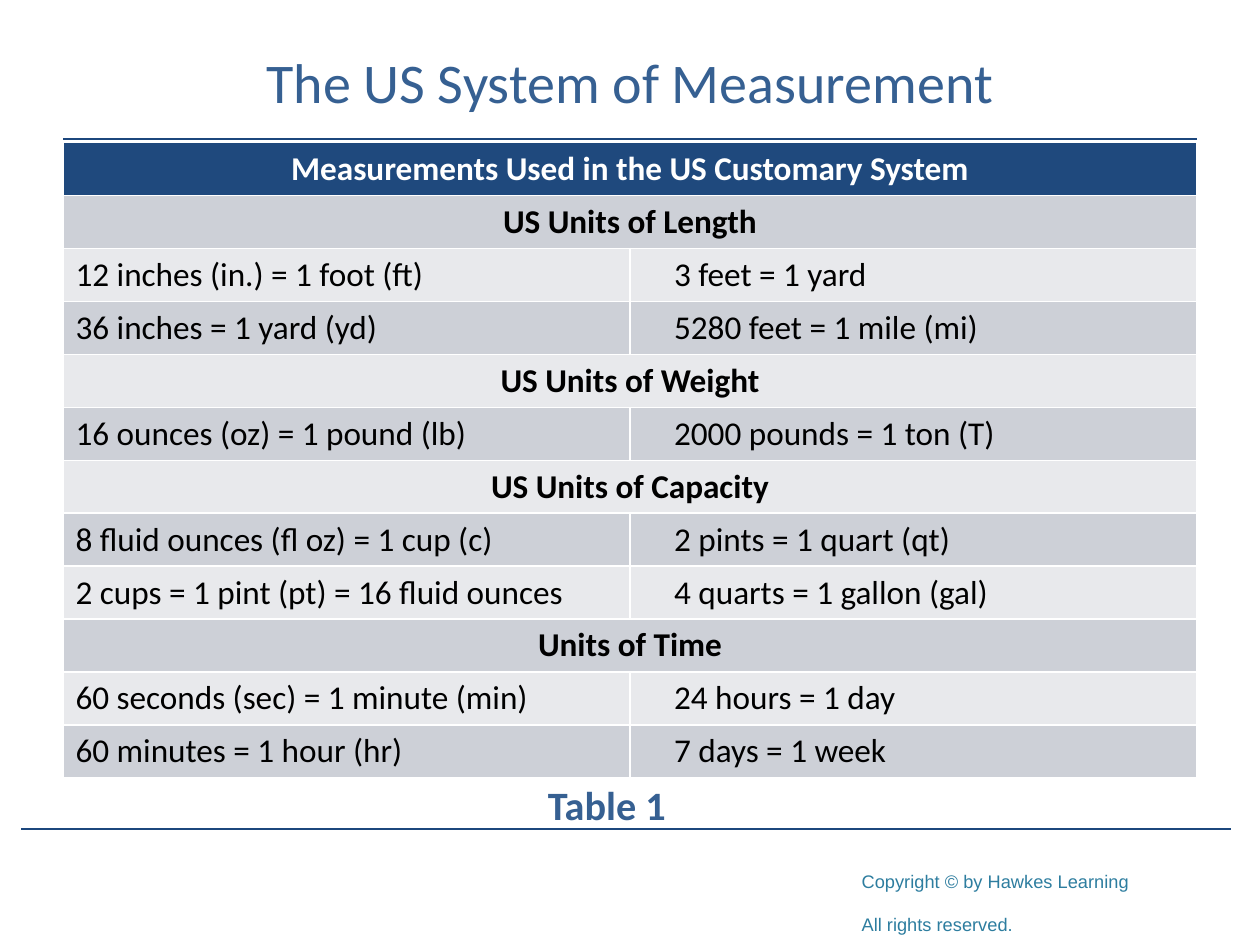
from dataclasses import dataclass

from pptx import Presentation
from pptx.dml.color import RGBColor
from pptx.enum.shapes import MSO_CONNECTOR, MSO_SHAPE
from pptx.enum.text import MSO_ANCHOR, PP_ALIGN
from pptx.oxml.ns import qn
from pptx.slide import Slide
from pptx.table import _Cell
from pptx.util import Inches, Pt

STRAIGHT = MSO_CONNECTOR.STRAIGHT
RECTANGLE = MSO_SHAPE.RECTANGLE
MIDDLE = MSO_ANCHOR.MIDDLE
TOP = MSO_ANCHOR.TOP
LEFT = PP_ALIGN.LEFT
CENTER = PP_ALIGN.CENTER
JUSTIFY = PP_ALIGN.JUSTIFY

WHITE = RGBColor(0xFF, 0xFF, 0xFF)
BLACK = RGBColor(0x00, 0x00, 0x00)
RULE_BLUE = RGBColor(0x1C, 0x47, 0x7D)
HEADER_BLUE = RGBColor(0x1F, 0x49, 0x7D)
TITLE_BLUE = RGBColor(0x36, 0x60, 0x92)
COPYRIGHT_BLUE = RGBColor(0x2D, 0x7D, 0x9F)
BAND_DARK = RGBColor(0xCD, 0xD0, 0xD7)
BAND_LIGHT = RGBColor(0xE8, 0xE9, 0xEC)

ROW_HEIGHT = 0.42


@dataclass(frozen=True)
class Rule:
    left: float
    right: float
    top: float


@dataclass(frozen=True)
class UnitGroup:
    heading: str
    equivalents: tuple[tuple[str, str], ...]


RULES = (Rule(0.5, 9.5, 1.1), Rule(0.17, 9.77, 6.58))
TABLE_HEADING = "Measurements Used in the US Customary System"
UNIT_GROUPS = (
    UnitGroup("US Units of Length", (
        ("12 inches (in.) = 1 foot (ft)", "3 feet = 1 yard"),
        ("36 inches = 1 yard (yd)", "5280 feet = 1 mile (mi)"),
    )),
    UnitGroup("US Units of Weight", (
        ("16 ounces (oz) = 1 pound (lb)", "2000 pounds = 1 ton (T)"),
    )),
    UnitGroup("US Units of Capacity", (
        ("8 fluid ounces (fl oz) = 1 cup (c)", "2 pints = 1 quart (qt)"),
        ("2 cups = 1 pint (pt) = 16 fluid ounces", "4 quarts = 1 gallon (gal)"),
    )),
    UnitGroup("Units of Time", (
        ("60 seconds (sec) = 1 minute (min)", "24 hours = 1 day"),
        ("60 minutes = 1 hour (hr)", "7 days = 1 week"),
    )),
)
COPYRIGHT_LINES = ("Copyright © by Hawkes Learning", "All rights reserved.")


def format_paragraph(paragraph, size: float, color: RGBColor, alignment,
                     bold: bool = False, name: str = "Calibri") -> None:
    paragraph.alignment = alignment
    font = paragraph.font
    font.name = name
    font.size = Pt(size)
    font.bold = bold
    font.color.rgb = color


def add_copyright(slide: Slide) -> None:
    shape = slide.shapes.add_shape(
        RECTANGLE, Inches(6.74), Inches(6.4), Inches(3.08), Inches(0.71))
    shape.shadow.inherit = False
    shape.fill.solid()
    shape.fill.fore_color.rgb = WHITE
    shape.line.fill.background()
    frame = shape.text_frame
    frame.word_wrap = True
    frame.vertical_anchor = TOP
    frame.margin_top = Inches(0.34)
    frame.text = "\n".join(COPYRIGHT_LINES)
    for paragraph in frame.paragraphs:
        format_paragraph(paragraph, 18, COPYRIGHT_BLUE, LEFT, name="Arial")
        for run in paragraph.runs:
            run._r.get_or_add_rPr().set("baseline", "-25000")


def add_rule(slide: Slide, rule: Rule) -> None:
    connector = slide.shapes.add_connector(
        STRAIGHT, Inches(rule.left), Inches(rule.top),
        Inches(rule.right), Inches(rule.top))
    connector.line.color.rgb = RULE_BLUE
    connector.line.width = Pt(1.25)
    properties = connector._element.spPr
    properties.append(properties.makeelement(qn("a:effectLst"), {}))


def add_title(slide: Slide) -> None:
    title = slide.shapes.title
    title.left, title.top = Inches(0.5), Inches(0.2)
    title.width, title.height = Inches(9), Inches(1)
    title.text_frame.text = "The US System of Measurement"
    title.text_frame.vertical_anchor = MIDDLE
    paragraph = title.text_frame.paragraphs[0]
    paragraph.line_spacing = Pt(30)
    format_paragraph(paragraph, 32, TITLE_BLUE, CENTER)


def fill_cell(cell: _Cell, text: str, fill: RGBColor, color: RGBColor = BLACK,
              alignment=LEFT, bold: bool = False) -> None:
    cell.fill.solid()
    cell.fill.fore_color.rgb = fill
    cell.text = text
    format_paragraph(cell.text_frame.paragraphs[0], 19, color, alignment, bold)


def add_measurement_table(slide: Slide) -> None:
    rows = [(TABLE_HEADING,)]
    for group in UNIT_GROUPS:
        rows += [(group.heading,), *group.equivalents]
    table = slide.shapes.add_table(
        len(rows), 2, Inches(0.5), Inches(1.13),
        Inches(9), Inches(ROW_HEIGHT * len(rows))).table
    for index, texts in enumerate(rows):
        table.rows[index].height = Inches(ROW_HEIGHT)
        first, second = table.cell(index, 0), table.cell(index, 1)
        band = BAND_DARK if index % 2 else BAND_LIGHT
        if len(texts) == 1:
            first.merge(second)
            fill, color = (band, BLACK) if index else (HEADER_BLUE, WHITE)
            fill_cell(first, texts[0], fill, color, CENTER, True)
        else:
            fill_cell(first, texts[0], band)
            fill_cell(second, texts[1], band)
            second.margin_left = Inches(0.35)


def add_caption(slide: Slide) -> None:
    caption = slide.shapes.add_textbox(
        Inches(4.25), Inches(6.14), Inches(1.5), Inches(0.45))
    caption.text_frame.word_wrap = True
    caption.text_frame.text = "Table 1"
    format_paragraph(
        caption.text_frame.paragraphs[0], 23, TITLE_BLUE, JUSTIFY, True)


def main() -> None:
    presentation = Presentation()
    presentation.slide_width = Inches(10)
    presentation.slide_height = Inches(7.5)
    title_only = presentation.slide_layouts.get_by_name("Title Only")
    slide = presentation.slides.add_slide(title_only)
    add_copyright(slide)
    for rule in RULES:
        add_rule(slide, rule)
    add_title(slide)
    add_measurement_table(slide)
    add_caption(slide)
    presentation.save("out.pptx")


if __name__ == "__main__":
    main()
